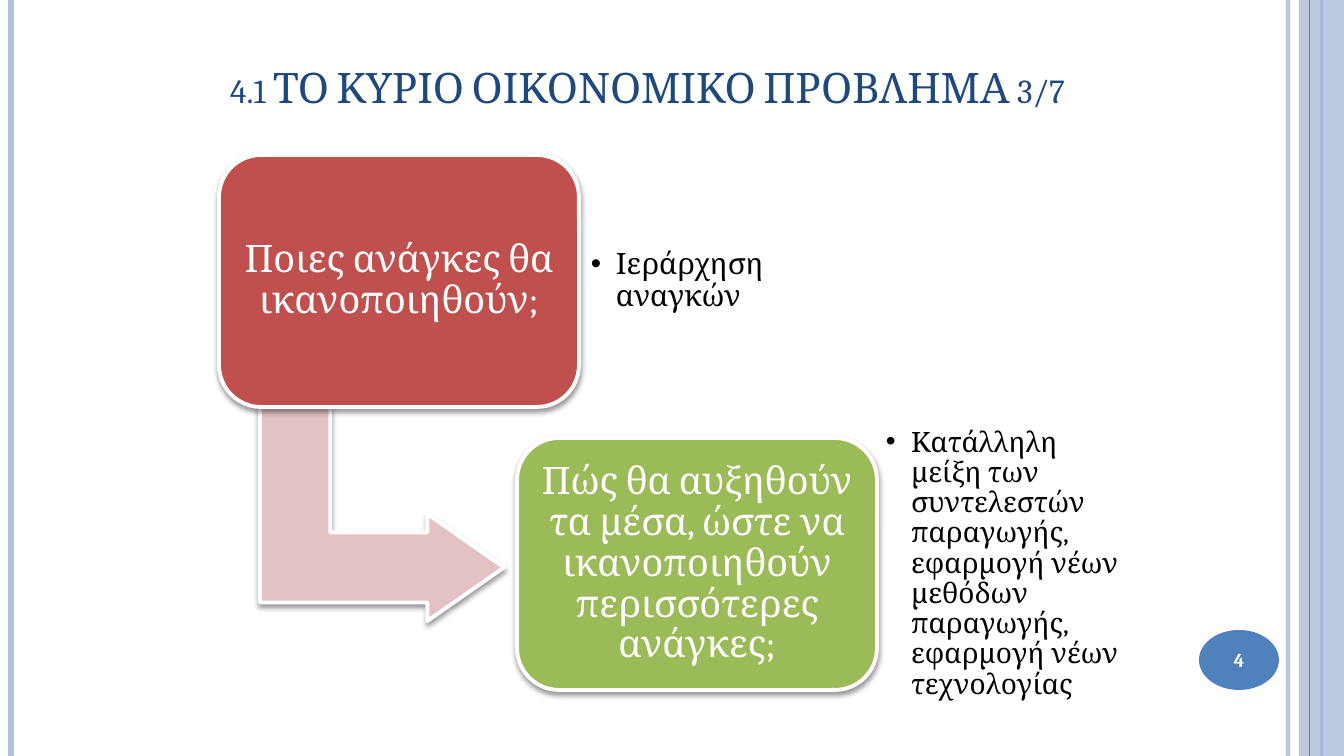
"""Build the slide on the main economic problem with two stepped questions."""
from lxml import etree
from pptx import Presentation, util as u
from pptx.dml.color import RGBColor
from pptx.enum import shapes, text
from pptx.oxml.ns import qn

FONT = "Cambria"
COLORS = {"navy": "1F497D", "blue": "4F81BD", "pale": "B3C1DB", "red": "C0504D",
          "green": "9BBB59", "pink": "E2C2C2", "white": "FFFFFF", "black": "000000"}
TITLE = "4.1 ΤΟ ΚΥΡΙΟ ΟΙΚΟΝΟΜΙΚΟ ΠΡΟΒΛΗΜΑ 3/7"
STEPS = [
    {"question": "Ποιες ανάγκες θα ικανοποιηθούν;", "fill": "red",
     "answer": "Ιεράρχηση αναγκών", "size": 21, "inset": 11},
    {"question": "Πώς θα αυξηθούν τα μέσα, ώστε να ικανοποιηθούν περισσότερες ανάγκες;",
     "fill": "green",
     "answer": "Κατάλληλη μείξη των συντελεστών παραγωγής, εφαρμογή νέων "
               "μεθόδων παραγωγής, εφαρμογή νέων τεχνολογίας",
     "size": 20, "inset": 8},
]
SLIDE_W, SLIDE_H = 1344, 756
RULES = [(1288, "pale", 3, 93), (11, "pale", 4.5, 100), (1321, "blue", 1.5, 100)]
TOP_RULE = (1310, "blue", 0.75, 100)
BAND = (1299, 0, 45, SLIDE_H)
BADGE = (1199, 630, 80, 60)
TITLE_BOX = (220, 4, 914, 113)
ARROW = (275, 392, 214, 244)
BOX_X, BOX_Y, BOX_W, BOX_H = 219, 155, 360, 252
STEP_X, STEP_Y = 298, 283
NOTE_DX, NOTE_DY, NOTE_W, NOTE_H = 361, 24, 262, 204


def px(n):
    return u.Emu(round(n * 914400 / 100.8))


def rgb(name):
    return RGBColor.from_string(COLORS[name])


def sub(parent, tag, **attrs):
    return etree.SubElement(parent, qn(tag), {k: str(v) for k, v in attrs.items()})


def set_alpha(fill_owner, percent):
    color = next(fill_owner.iter(qn("a:srgbClr")))
    sub(color, "a:alpha", val=percent * 1000)


def add_rule(s, x, color, width, alpha):
    line = s.shapes.add_connector(shapes.MSO_CONNECTOR.STRAIGHT,
                                  px(x), 0, px(x), px(SLIDE_H))
    line.line.color.rgb = rgb(color)
    line.line.width = u.Pt(width)
    if alpha < 100:
        set_alpha(line._element.spPr, alpha)
    sub(line._element.spPr, "a:effectLst")
    return line


def add_shape(s, kind, box, fill, outlined=False):
    sp = s.shapes.add_shape(kind, *map(px, box))
    sp.shadow.inherit = False
    sp.fill.solid()
    sp.fill.fore_color.rgb = rgb(fill)
    if not outlined:
        sp.line.fill.background()
        return sp
    sp.line.color.rgb = rgb("white")
    sp.line.width = u.Pt(2.75)
    effects = sp._element.spPr.find(qn("a:effectLst"))
    shadow = sub(effects, "a:outerShdw", blurRad=u.Pt(4), dist=u.Pt(2),
                 dir=5400000, rotWithShape=0)
    sub(shadow, "a:srgbClr", val=COLORS["black"])
    set_alpha(shadow, 40)
    return sp


def write(sp, words, size, color, align, anchor=text.MSO_ANCHOR.MIDDLE,
          inset=None, spacing=None, bold=False, bullet=False):
    tf = sp.text_frame
    frame = {"word_wrap": True, "auto_size": text.MSO_AUTO_SIZE.NONE,
             "vertical_anchor": anchor}
    if inset is not None:
        for side in ("left", "top", "right", "bottom"):
            frame["margin_" + side] = px(inset)
    for name, value in frame.items():
        setattr(tf, name, value)
    p = tf.paragraphs[0]
    for name, value in {"alignment": align, "line_spacing": spacing,
                        "space_before": u.Pt(0)}.items():
        setattr(p, name, value)
    if bullet:
        props = p._p.get_or_add_pPr()
        props.set("marL", str(px(25)))
        props.set("indent", str(-px(25)))
        sub(props, "a:buChar", char="•")
    r = p.add_run()
    r.text = words
    for name, value in {"name": FONT, "size": u.Pt(size), "bold": bold}.items():
        setattr(r.font, name, value)
    r.font.color.rgb = rgb(color)
    return r


def place(sp, box):
    for name, value in zip(("left", "top", "width", "height"), box):
        setattr(sp, name, px(value))


def main():
    prs = Presentation()
    prs.slide_width, prs.slide_height = px(SLIDE_W), px(SLIDE_H)
    s = prs.slides.add_slide(prs.slide_layouts[3])
    kinds, align = shapes.MSO_SHAPE, text.PP_ALIGN

    rules = [add_rule(s, *rule) for rule in RULES]
    band = add_shape(s, kinds.RECTANGLE, BAND, "pale")
    set_alpha(band._element.spPr, 87)
    rules[-1].begin_connect(band, 0)
    rules[-1].end_connect(band, 2)
    add_rule(s, *TOP_RULE)
    badge = add_shape(s, kinds.OVAL, BADGE, "blue")
    write(badge, "4", 14, "white", align.CENTER, inset=0, bold=True)

    place(s.shapes.title, TITLE_BOX)
    r = write(s.shapes.title, TITLE, 30, "navy", align.LEFT, text.MSO_ANCHOR.BOTTOM)
    r.font._element.set("cap", "small")

    arrow = add_shape(s, kinds.BENT_UP_ARROW, ARROW, "pink", outlined=True)
    arrow.rotation = 90
    for i, value in enumerate((0.328, 0.25, 0.358)):
        arrow.adjustments[i] = value

    for i, step in enumerate(STEPS):
        x, y = BOX_X + i * STEP_X, BOX_Y + i * STEP_Y
        box = add_shape(s, kinds.ROUNDED_RECTANGLE, (x, y, BOX_W, BOX_H),
                        step["fill"], outlined=True)
        write(box, step["question"], 27, "white", align.CENTER, inset=11, spacing=0.9)
        note = s.placeholders[i + 1]
        place(note, (x + NOTE_DX, y + NOTE_DY, NOTE_W, NOTE_H))
        write(note, step["answer"], step["size"], "black", align.LEFT,
              inset=step["inset"], spacing=0.9, bullet=True)

    prs.save("out.pptx")


if __name__ == "__main__":
    main()
